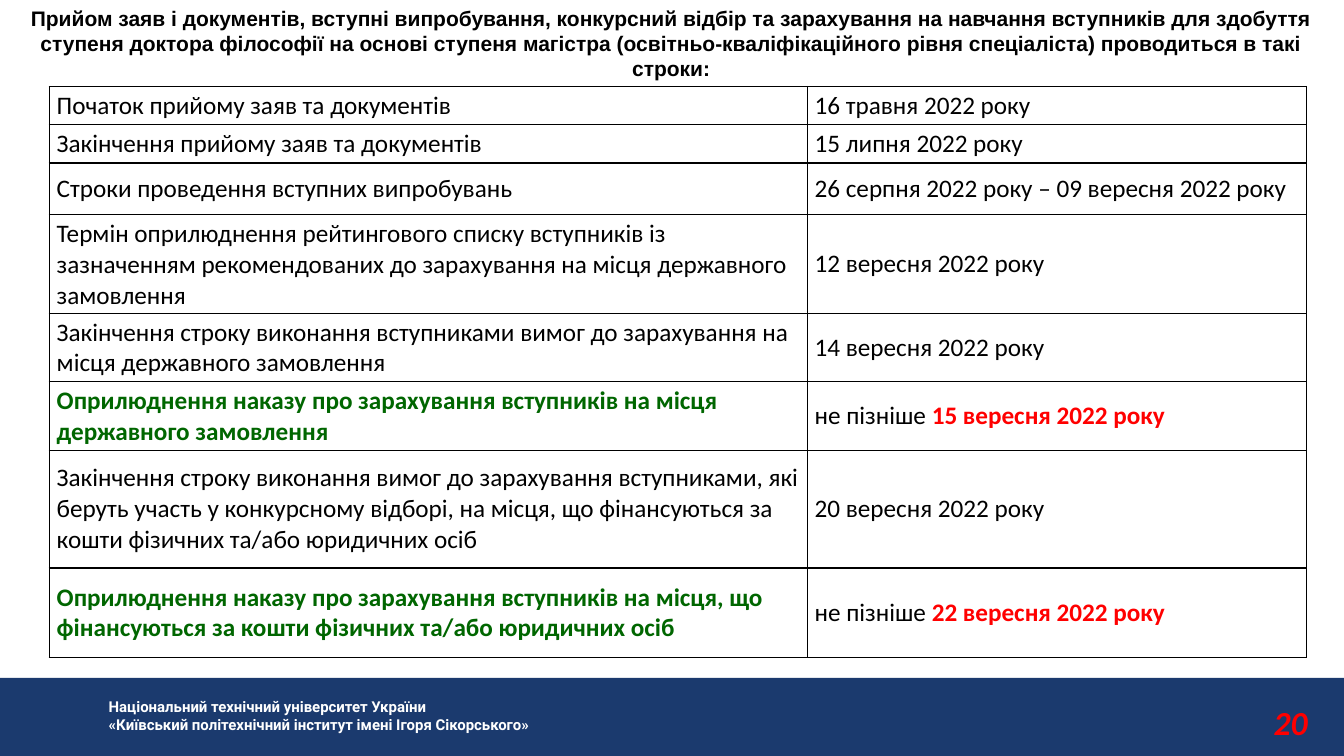
from lxml.etree import SubElement
from pptx import Presentation
from pptx.dml.color import RGBColor
from pptx.enum.shapes import MSO_SHAPE
from pptx.enum.text import MSO_ANCHOR, MSO_AUTO_SIZE, PP_ALIGN
from pptx.oxml.ns import qn
from pptx.util import Cm, Pt

BLACK = RGBColor(0x00, 0x00, 0x00)
WHITE = RGBColor(0xFF, 0xFF, 0xFF)
NAVY = RGBColor(0x1B, 0x3A, 0x6E)
GREEN = RGBColor(0x00, 0x66, 0x00)
RED = RGBColor(0xFF, 0x00, 0x00)

TITLE = (
    "Прийом заяв і документів, вступні випробування, конкурсний відбір та "
    "зарахування на навчання вступників для здобуття ступеня доктора філософії "
    "на основі ступеня магістра (освітньо-кваліфікаційного рівня спеціаліста) "
    "проводиться в такі строки:"
)
UNIVERSITY = (
    "Національний технічний університет України\n"
    "«Київський політехнічний інститут імені Ігоря Сікорського»"
)
NOT_LATER = "не пізніше "
COLUMN_WIDTHS = (19.1, 12.58)
STAGES = [
    (0.89, "Початок прийому заяв та документів", "16 травня 2022 року", False),
    (0.89, "Закінчення прийому заяв та документів", "15 липня 2022 року", False),
    (1.3, "Строки проведення вступних випробувань",
     "26 серпня 2022 року – 09 вересня 2022 року", False),
    (2.26, "Термін оприлюднення рейтингового списку вступників із зазначенням "
     "рекомендованих до зарахування на місця державного замовлення",
     "12 вересня 2022 року", False),
    (1.57, "Закінчення строку виконання вступниками вимог до зарахування на "
     "місця державного замовлення", "14 вересня 2022 року", False),
    (1.57, "Оприлюднення наказу про зарахування вступників на місця "
     "державного замовлення", "15 вересня 2022 року", True),
    (2.97, "Закінчення строку виконання вимог до зарахування вступниками, які "
     "беруть участь у конкурсному відборі, на місця, що фінансуються за кошти "
     "фізичних та/або юридичних осіб", "20 вересня 2022 року", False),
    (2.26, "Оприлюднення наказу про зарахування вступників на місця, що "
     "фінансуються за кошти фізичних та/або юридичних осіб",
     "22 вересня 2022 року", True),
]


def set_font(font, name, size, color, bold=False, italic=False):
    """Set the look of a paragraph or run font."""
    font.name, font.size = name, Pt(size)
    font.bold, font.italic = bold, italic
    font.color.rgb = color


def add_label(s, box, text, name, size, color, wrap=False, italic=False):
    """Add a bold text box and return its text frame."""
    tf = s.shapes.add_textbox(*map(Cm, box)).text_frame
    tf.word_wrap = wrap
    tf.auto_size = MSO_AUTO_SIZE.SHAPE_TO_FIT_TEXT
    p = tf.paragraphs[0]
    p.text = text
    set_font(p.font, name, size, color, True, italic)
    return tf


def add_title(s, box):
    """Add the centred heading."""
    tf = add_label(s, box, TITLE, "Arial", 15, BLACK, wrap=True)
    tf.vertical_anchor = MSO_ANCHOR.MIDDLE
    tf.paragraphs[0].alignment = PP_ALIGN.CENTER


def add_footer(s, left, top, width, height):
    """Add the navy band with the university name and page number."""
    sp = s.shapes.add_shape(
        MSO_SHAPE.RECTANGLE, Cm(left), Cm(top), Cm(width), Cm(height))
    sp.shadow.inherit = False
    sp.fill.solid()
    sp.fill.fore_color.rgb = NAVY
    sp.line.fill.background()
    add_label(s, (left + 2.49, top + 0.38, 11.56, 1.17),
              UNIVERSITY, "Roboto", 10.7, WHITE)
    add_label(s, (left + width - 2.02, top + 0.48, 1.37, 1.27),
              "20", "Calibri", 24, RED, italic=True)


def style_cell(cell):
    """Give a cell thin black borders, no fill and middle anchoring."""
    tcPr = cell._tc.get_or_add_tcPr()
    for side in ("a:lnL", "a:lnR", "a:lnT", "a:lnB"):
        ln = SubElement(tcPr, qn(side), w=str(Pt(1)))
        fill = SubElement(ln, qn("a:solidFill"))
        SubElement(fill, qn("a:srgbClr"), val=str(BLACK))
    cell.fill.background()
    cell.vertical_anchor = MSO_ANCHOR.MIDDLE
    cell.margin_left = cell.margin_right = Cm(0.19)
    cell.margin_top = cell.margin_bottom = Cm(0.1)


def add_schedule(s, left, top):
    """Add the table of admission stages and dates."""
    heights = [stage[0] for stage in STAGES]
    table = s.shapes.add_table(
        len(STAGES), len(COLUMN_WIDTHS), Cm(left), Cm(top),
        Cm(sum(COLUMN_WIDTHS)), Cm(sum(heights))).table
    table.first_row = table.horz_banding = False
    for column, width in zip(table.columns, COLUMN_WIDTHS):
        column.width = Cm(width)
    for i, (height, stage, date, is_order) in enumerate(STAGES):
        table.rows[i].height = Cm(height)
        stage_cell, date_cell = table.rows[i].cells
        style_cell(stage_cell)
        style_cell(date_cell)
        p = stage_cell.text_frame.paragraphs[0]
        p.text = stage
        set_font(p.font, "Calibri", 18, GREEN if is_order else BLACK, is_order)
        p = date_cell.text_frame.paragraphs[0]
        if is_order:
            for text, color in ((NOT_LATER, BLACK), (date, RED)):
                r = p.add_run()
                r.text = text
                set_font(r.font, "Calibri", 18, color, color == RED)
        else:
            p.text = date
            set_font(p.font, "Calibri", 18, BLACK)


def main():
    """Build and save the slide."""
    prs = Presentation()
    prs.slide_width, prs.slide_height = Cm(33.87), Cm(19.05)
    s = prs.slides.add_slide(prs.slide_layouts[6])
    add_footer(s, 0, 17.08, 33.87, 1.97)
    add_schedule(s, 1.24, 2.18)
    add_title(s, (0.28, 0, 33.27, 2.18))
    prs.save("out.pptx")


if __name__ == "__main__":
    main()
